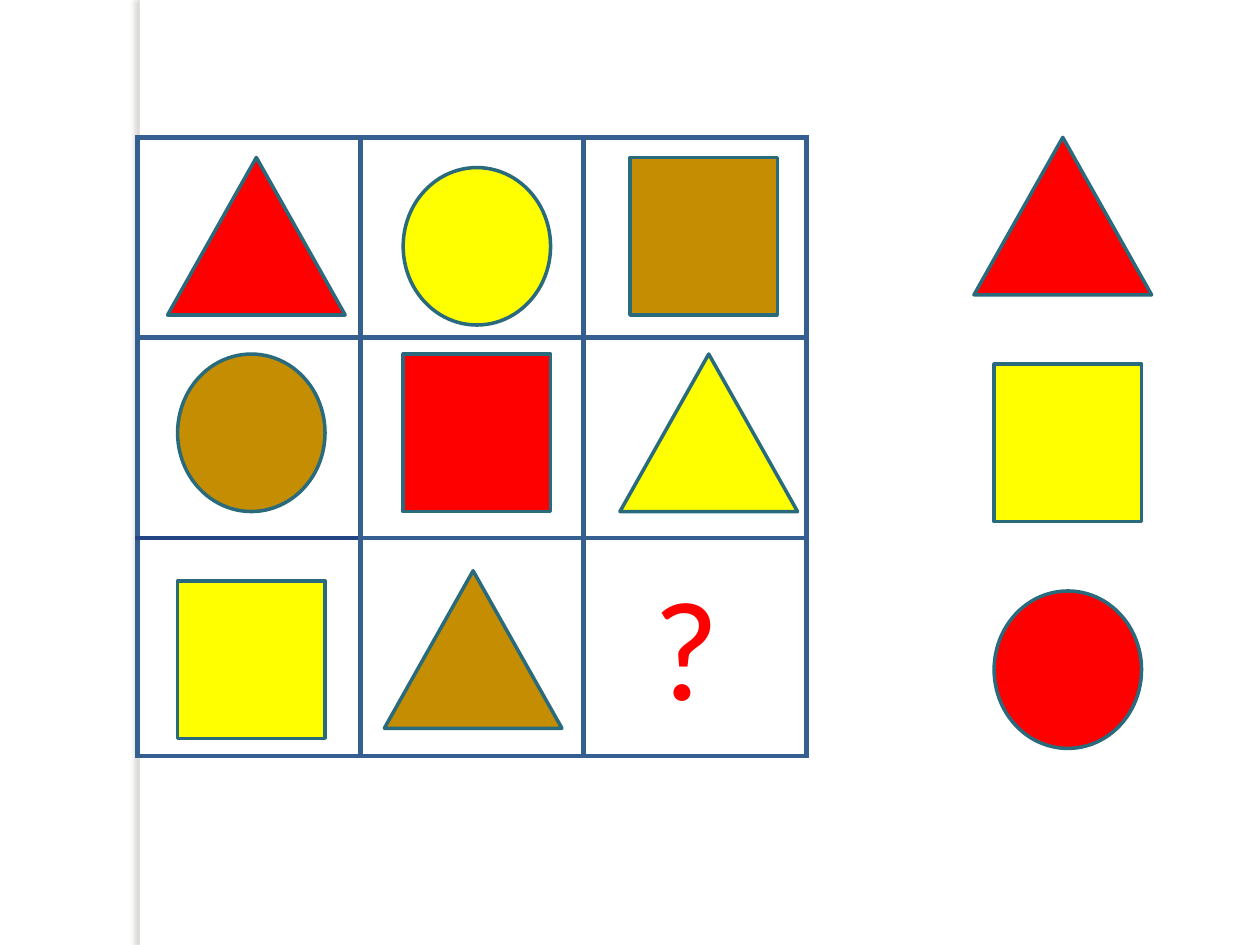
from lxml import etree
from pptx import Presentation
from pptx.dml.color import RGBColor
from pptx.enum import shapes as kinds
from pptx.oxml import ns
from pptx.util import Inches, Pt

theme = {
    "white": "FFFFFF", "red": "FF0000", "yellow": "FFFF00", "brown": "C58D01",
    "edge": "296B7C", "grid": "365F91", "dark": "244583", "shade": "736F63",
    "font": "Calibri", "size": Pt(81), "rule": Pt(3), "line": Pt(2),
}


def add_form(kind, color, left, top, width, height):
    form = slide.shapes.add_shape(kind, *map(Inches, (left, top, width, height)))
    form.shadow.inherit = False
    form.fill.solid()
    form.fill.fore_color.rgb = RGBColor.from_string(theme[color])
    return form


def add_node(base, tag, **attrs):
    return etree.SubElement(base, ns.qn(tag), {k: str(v) for k, v in attrs.items()})


deck = Presentation()
deck.slide_width, deck.slide_height = Inches(10), Inches(7.5)
slide = deck.slides.add_slide(deck.slide_layouts[6])

strip = add_form(kinds.MSO_SHAPE.RECTANGLE, "white", 1.11, 0, 0.08, 7.5)
strip.line.fill.background()
glow = add_node(strip.element.spPr.find(ns.qn("a:effectLst")), "a:outerShdw",
                blurRad=Pt(3), dist=Pt(3), dir=180 * 60000, algn="tl", rotWithShape=0)
tint = add_node(glow, "a:srgbClr", val=theme["shade"])
add_node(tint, "a:alpha", val=25000)

frame = slide.shapes.add_table(3, 3, Inches(1.09), Inches(1.09), Inches(5.32), Inches(4.91))
grid = frame.table
grid.first_row = grid.horz_banding = False
for col in grid.columns:
    col.width = Inches(1.77)
for row, height in zip(grid.rows, (1.59, 1.59, 1.73)):
    row.height = Inches(height)

for row in range(3):
    for col in range(3):
        cell = grid.cell(row, col)
        props = cell._tc.get_or_add_tcPr()
        for side in "LRTB":
            dark = col == 0 and (row, side) in ((1, "B"), (2, "T"))
            edge = add_node(props, "a:ln" + side, w=theme["rule"])
            fill = add_node(edge, "a:solidFill")
            add_node(fill, "a:srgbClr", val=theme["dark" if dark else "grid"])
        cell.fill.solid()
        cell.fill.fore_color.rgb = RGBColor.from_string(theme["white"])

cell = grid.cell(2, 2)
inset = {"margin_left": 0.56, "margin_right": 0.05, "margin_top": 0.01, "margin_bottom": 0}
for name, value in inset.items():
    setattr(cell, name, Inches(value))
para = cell.text_frame.paragraphs[0]
para.line_spacing = 1.15
run = para.add_run()
run.text = "?"
for name, value in {"name": theme["font"], "size": theme["size"], "bold": False}.items():
    setattr(run.font, name, value)
run.font.color.rgb = RGBColor.from_string(theme["red"])

forms = {
    "triangle": (kinds.MSO_SHAPE.ISOSCELES_TRIANGLE, 1.41),
    "circle": (kinds.MSO_SHAPE.OVAL, 1.17),
    "square": (kinds.MSO_SHAPE.RECTANGLE, 1.17),
}
pieces = [
    ("triangle", "red", 1.33, 1.25),
    ("circle", "yellow", 3.2, 1.33),
    ("square", "brown", 5, 1.25),
    ("triangle", "yellow", 4.92, 2.81),
    ("square", "red", 3.2, 2.81),
    ("circle", "brown", 1.41, 2.81),
    ("triangle", "brown", 3.05, 4.53),
    ("square", "yellow", 1.41, 4.61),
    ("triangle", "red", 7.73, 1.09),
    ("circle", "red", 7.89, 4.69),
    ("square", "yellow", 7.89, 2.89),
]
for form, color, left, top in pieces:
    kind, width = forms[form]
    piece = add_form(kind, color, left, top, width, 1.25)
    piece.line.color.rgb = RGBColor.from_string(theme["edge"])
    piece.line.width = theme["line"]

deck.save("out.pptx")
